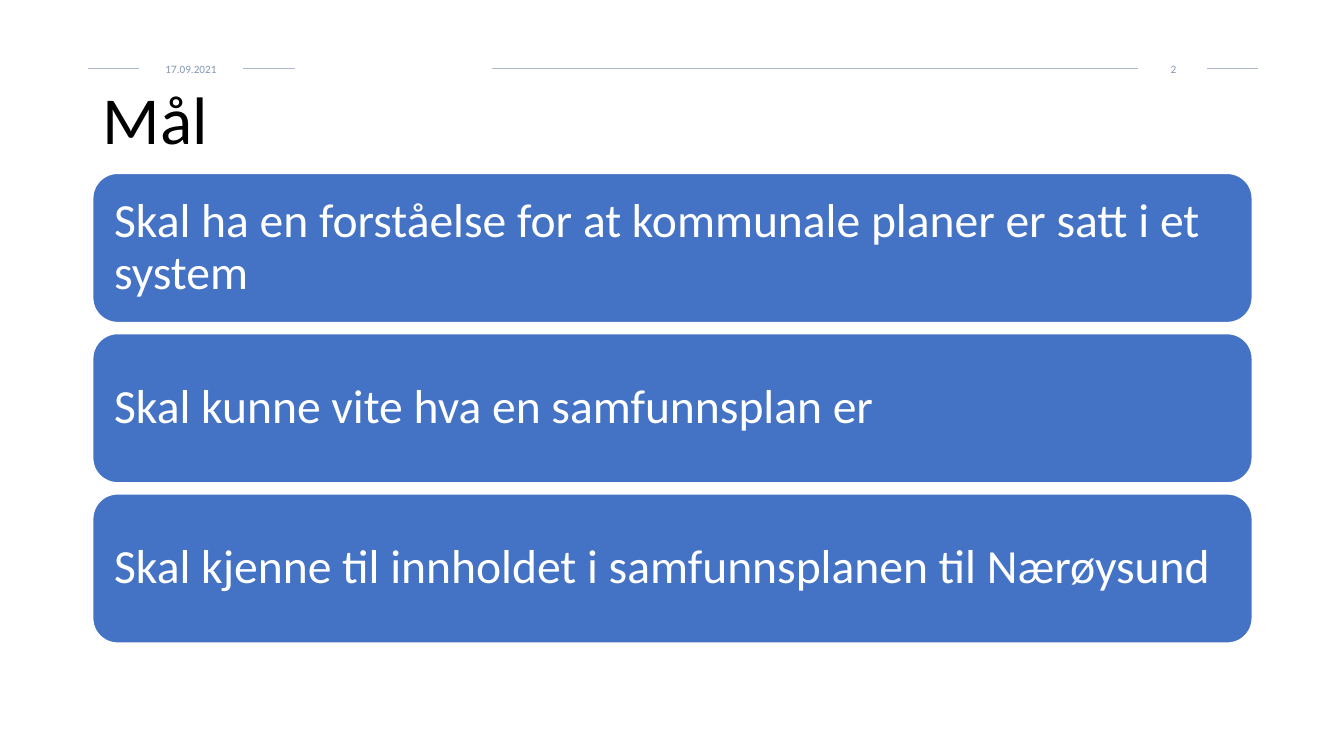
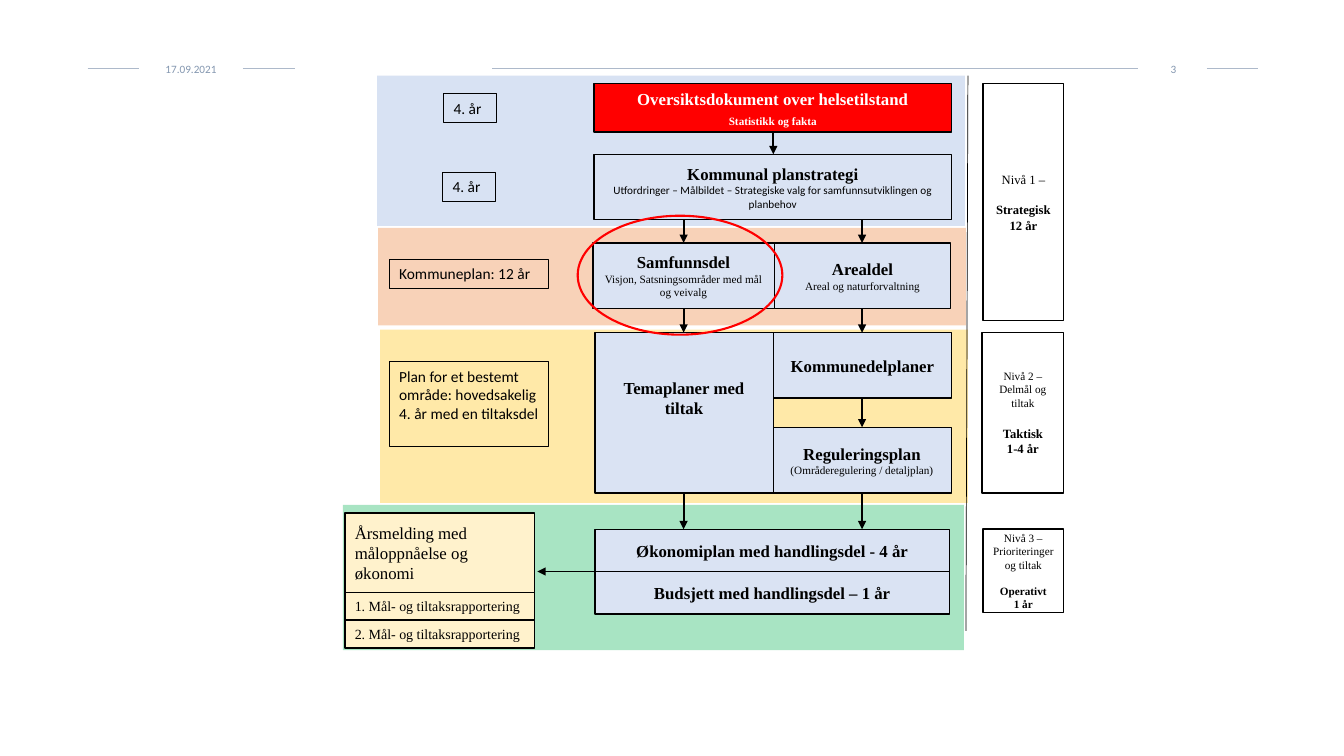
"""Build two slides on municipal planning: the goals and the planning system."""
import pptx
import pptx.util
import pptx.dml.color
import pptx.enum.shapes
import pptx.enum.text
import pptx.oxml
import pptx.oxml.ns

RGB = pptx.dml.color.RGBColor
SHAPE = pptx.enum.shapes.MSO_SHAPE
ALIGN = pptx.enum.text.PP_ALIGN
ANCHOR = pptx.enum.text.MSO_ANCHOR
Pt = pptx.util.Pt
PX = 9144

BLACK = RGB(0x00, 0x00, 0x00)
WHITE = RGB(0xFF, 0xFF, 0xFF)
RED = RGB(0xFF, 0x00, 0x00)
BLUE = RGB(0x44, 0x72, 0xC4)
PALE_BLUE = RGB(0xDA, 0xE3, 0xF3)
CREAM = RGB(0xFF, 0xF2, 0xCC)
RULE = RGB(0xAD, 0xB9, 0xCA)
HEADER = RGB(0x84, 0x97, 0xB0)
SANS, SERIF = "Calibri", "Times New Roman"
INSETS = (10, 5, 10, 5)
LEVEL_INSETS = (8, 5, 8, 5)

DATE = "17.09.2021"
HEADER_Y = 68
HEADER_RULES = [(87, 138), (241, 293), (488, 1129), (1197, 1248)]

GOALS_TITLE = "Mål"
GOALS = [
    "Skal ha en forståelse for at kommunale planer er satt i et system",
    "Skal kunne vite hva en samfunnsplan er",
    "Skal kjenne til innholdet i samfunnsplanen til Nærøysund",
]
GOAL_LEFT, GOAL_TOP, GOAL_W, GOAL_H, GOAL_GAP = 92, 172, 1150, 148, 11

BANDS = [
    ((374, 75, 583, 149), RGB(0x8F, 0xAA, 0xDC)),
    ((375, 226, 583, 97), RGB(0xED, 0x7D, 0x31)),
    ((377, 327, 583, 172), RGB(0xFF, 0xC0, 0x00)),
    ((340, 501, 616, 144), RGB(0x00, 0xB0, 0x50)),
]
BAND_ALPHA = 34000

PLANS = [
    ((589, 153, 355, 65), "Kommunal planstrategi",
     "Utfordringer – Målbildet – Strategiske valg for samfunnsutviklingen og planbehov", SANS),
    ((588, 241, 180, 65), "Samfunnsdel", "Visjon, Satsningsområder med mål og veivalg", SERIF),
    ((768, 241, 175, 65), "Arealdel", "Areal og naturforvaltning", SERIF),
    ((767, 330, 177, 65), "Kommunedelplaner", None, SERIF),
    ((766, 424, 178, 65), "Reguleringsplan", "(Områderegulering / detaljplan)", SERIF),
    ((590, 525, 352, 42), "Økonomiplan med handlingsdel - 4 år", None, SERIF),
    ((590, 567, 352, 42), "Budsjett med handlingsdel – 1 år", None, SERIF),
]
OVERVIEW_AT = (589, 83, 355, 48)
OVERVIEW = ["Oversiktsdokument over helsetilstand", "Statistikk og fakta"]
THEME_AT = (590, 330, 177, 159)
THEME = ["Temaplaner med", "tiltak"]

LEVELS = [
    ((975, 83, 80, 235), "Nivå 1 –", 9, "Strategisk", "12 år", 9, 11),
    ((974, 330, 81, 159), "Nivå 2 – Delmål og tiltak", 8, "Taktisk", "1-4 år", 9, 12),
    ((975, 525, 80, 83), "Nivå 3 – Prioriteringer og tiltak", 8, "Operativt", "1 år", 8, 9),
]
REPORTS = [
    ((342, 509, 188, 79), "Årsmelding med måloppnåelse og økonomi", 12),
    ((342, 588, 188, 27), "1. Mål- og tiltaksrapportering", 10),
    ((342, 615, 188, 28), "2. Mål- og tiltaksrapportering", 10),
]
PERIODS = [
    ((440, 93, 52, 29), "4. år"),
    ((439, 171, 52, 29), "4. år"),
    ((386, 257, 158, 29), "Kommuneplan: 12 år"),
    ((386, 359, 158, 84), "Plan for et bestemt område: hovedsakelig 4. år med en tiltaksdel"),
]
LEFT_X, MID_X, RIGHT_X = 678, 767, 855
DOWN_ARROWS = [
    (MID_X, 131, 153),
    (LEFT_X, 218, 241), (RIGHT_X, 218, 241),
    (LEFT_X, 306, 330), (RIGHT_X, 306, 330),
    (RIGHT_X, 395, 424),
    (LEFT_X, 489, 525), (RIGHT_X, 489, 525),
]
REPORT_ARROW = (590, 567, 533, 567)
DIVIDER = (958, 626, 960, 75)
FOCUS_AT = (573, 214, 203, 118)


def emu(values):
    return [v * PX for v in values]


def para(text, size, bold=False, font=SERIF, color=BLACK, before=0):
    return dict(text=text, size=size, bold=bold, font=font, color=color, before=before)


def write(sp, paras, align=ALIGN.CENTER, anchor=ANCHOR.MIDDLE, insets=INSETS, spacing=None):
    tf = sp.text_frame
    tf.word_wrap = True
    tf.vertical_anchor = anchor
    tf.margin_left, tf.margin_top, tf.margin_right, tf.margin_bottom = emu(insets)
    for i, item in enumerate(paras):
        p = tf.paragraphs[0] if i == 0 else tf.add_paragraph()
        p.alignment = align
        if spacing:
            p.line_spacing = spacing
        if item["before"]:
            p.space_before = Pt(item["before"])
        r = p.add_run()
        r.text = item["text"]
        r.font.size = Pt(item["size"])
        r.font.bold = item["bold"]
        r.font.name = item["font"]
        r.font.color.rgb = item["color"]


def label(s, at, paras, **style):
    write(s.shapes.add_textbox(*emu(at)), paras, **style)


def box(s, at, fill=None, line=BLACK, width=1, kind=SHAPE.RECTANGLE, alpha=None):
    sp = s.shapes.add_shape(kind, *emu(at))
    sp.shadow.inherit = False
    if fill is None:
        sp.fill.background()
    else:
        sp.fill.solid()
        sp.fill.fore_color.rgb = fill
    if alpha:
        clr = sp.fill._xPr.find(".//" + pptx.oxml.ns.qn("a:srgbClr"))
        clr.append(xml(f'<a:alpha {{ns}} val="{alpha}"/>'))
    if line is None:
        sp.line.fill.background()
    else:
        sp.line.color.rgb = line
        sp.line.width = Pt(width)
    return sp


def xml(text):
    return pptx.oxml.parse_xml(text.format(ns=pptx.oxml.ns.nsdecls("a")))


def line(s, ends, color=BLACK, width=0.5, arrow=False):
    kind = pptx.enum.shapes.MSO_CONNECTOR.STRAIGHT
    cx = s.shapes.add_connector(kind, *emu(ends))
    cx.line.color.rgb = color
    cx.line.width = Pt(width)
    if arrow:
        cx.line._get_or_add_ln().append(xml('<a:tailEnd {ns} type="triangle"/>'))
    cx._element.spPr.append(xml("<a:effectLst {ns}/>"))


def new_slide(prs, number):
    s = prs.slides.add_slide(prs.slide_layouts[6])
    for x1, x2 in HEADER_RULES:
        line(s, (x1, HEADER_Y, x2, HEADER_Y), RULE, 0.25)
    for at, text in (((155, 62, 69, 13), DATE), ((1144, 62, 40, 13), str(number))):
        label(s, at, [para(text, 8, font=SANS, color=HEADER)],
              anchor=ANCHOR.TOP, insets=(0, 0, 0, 0))
    return s


def goals_slide(prs):
    s = new_slide(prs, 2)
    label(s, (92, 81, 1150, 90), [para(GOALS_TITLE, 48, font=SANS)],
          align=ALIGN.LEFT, anchor=ANCHOR.TOP, spacing=0.9)
    for i, goal in enumerate(GOALS):
        top = GOAL_TOP + i * (GOAL_H + GOAL_GAP)
        sp = box(s, (GOAL_LEFT, top, GOAL_W, GOAL_H), BLUE, WHITE, kind=SHAPE.ROUNDED_RECTANGLE)
        write(sp, [para(goal, 34, font=SANS, color=WHITE)],
              align=ALIGN.LEFT, insets=(14, 14, 14, 14), spacing=0.9)


def system_slide(prs):
    s = new_slide(prs, 3)
    for at, color in BANDS:
        box(s, at, color, None, alpha=BAND_ALPHA)
    line(s, DIVIDER)
    heading, detail = OVERVIEW
    write(box(s, OVERVIEW_AT, RED),
          [para(heading, 12, True, color=WHITE), para(detail, 8, True, color=WHITE, before=4)])
    for at, name, detail, font in PLANS:
        paras = [para(name, 12, True)]
        if detail:
            paras.append(para(detail, 8, font=font))
        write(box(s, at, PALE_BLUE), paras)
    write(box(s, THEME_AT, PALE_BLUE), [para(t, 12, True) for t in THEME],
          insets=(10, 5, 10, 34))
    for at, level, size, name, period, name_size, gap in LEVELS:
        write(box(s, at, WHITE),
              [para(level, size), para(name, name_size, True, before=gap),
               para(period, name_size, True)], insets=LEVEL_INSETS)
    for at, text, size in REPORTS:
        write(box(s, at, CREAM), [para(text, size)], align=ALIGN.LEFT)
    for at, text in PERIODS:
        write(box(s, at, width=0.75), [para(text, 11, font=SANS)],
              align=ALIGN.LEFT, anchor=ANCHOR.TOP)
    for x, top, bottom in DOWN_ARROWS:
        line(s, (x, top, x, bottom), width=1.5, arrow=True)
    line(s, REPORT_ARROW, arrow=True)
    box(s, FOCUS_AT, line=RED, width=1.5, kind=SHAPE.OVAL)


def main():
    prs = pptx.Presentation()
    prs.slide_width, prs.slide_height = emu((1333, 750))
    goals_slide(prs)
    system_slide(prs)
    prs.save("out.pptx")


if __name__ == "__main__":
    main()
